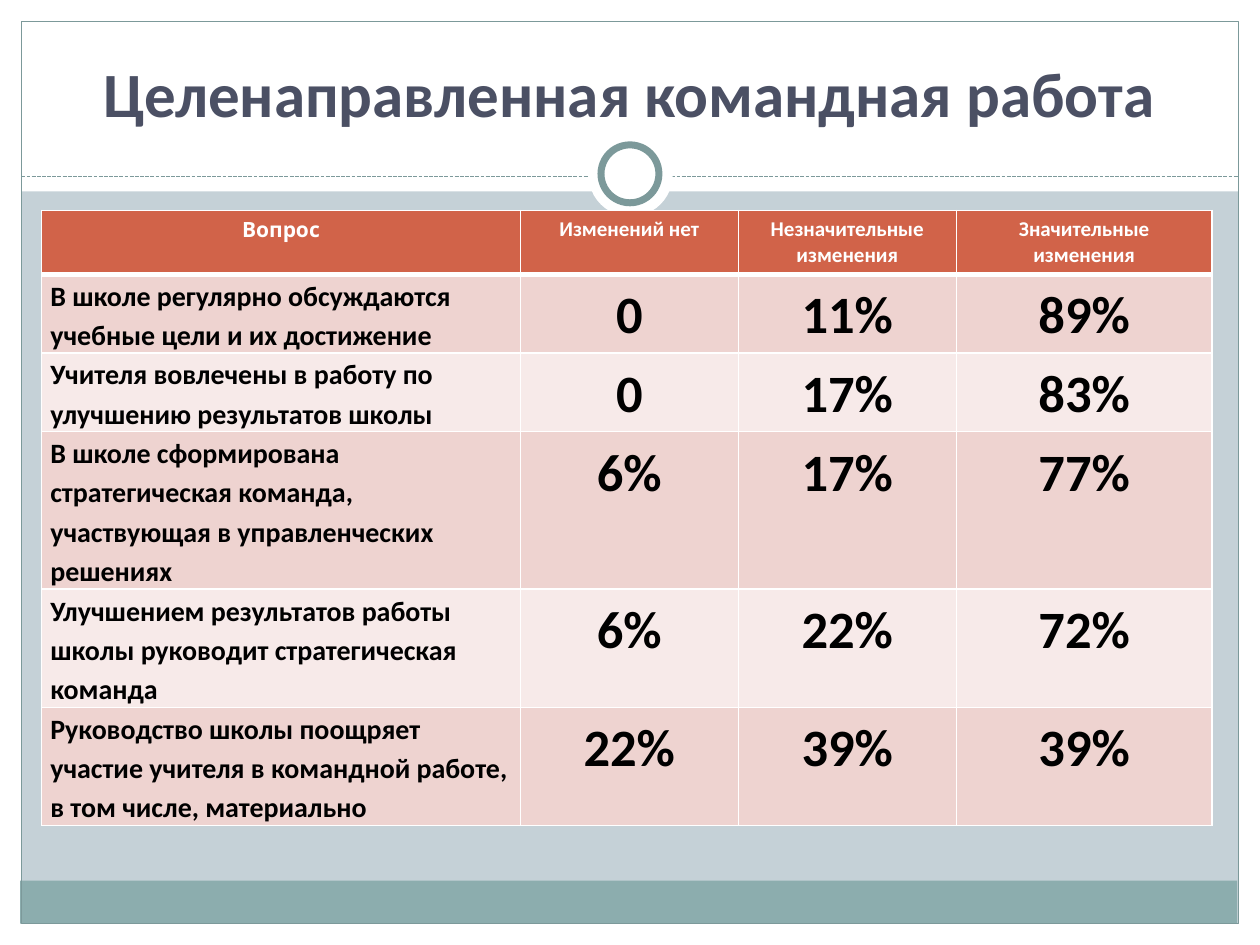
import pptx
import pptx.util
from pptx.dml.color import RGBColor
from pptx.enum.dml import MSO_LINE
from pptx.enum.shapes import MSO_CONNECTOR, MSO_SHAPE
from pptx.enum.text import MSO_ANCHOR, PP_ALIGN
from pptx.oxml.ns import qn
from lxml import etree

Inches, Pt = pptx.util.Inches, pptx.util.Pt

WHITE = RGBColor(0xFF, 0xFF, 0xFF)
BLACK = RGBColor(0, 0, 0)
BACKGROUND = RGBColor(0xC5, 0xD1, 0xD7)
BAND = RGBColor(0x8C, 0xAD, 0xAE)
FRAME = RGBColor(0x7C, 0x99, 0x9A)
TITLE_COLOR = RGBColor(0x4B, 0x50, 0x64)
HEADER_FILL = RGBColor(0xD1, 0x63, 0x49)
ROW_FILLS = (RGBColor(0xEE, 0xD3, 0xD0), RGBColor(0xF7, 0xEA, 0xE9))

TITLE = "Целенаправленная командная работа"
HEADER = ("Вопрос", "Изменений нет", "Незначительные изменения", "Значительные изменения")
ANSWERS = [
    ("В школе регулярно обсуждаются учебные цели и их достижение", "0", "11%", "89%"),
    ("Учителя вовлечены в работу по улучшению результатов школы", "0", "17%", "83%"),
    ("В школе сформирована стратегическая команда, участвующая в управленческих решениях",
     "6%", "17%", "77%"),
    ("Улучшением результатов работы школы руководит стратегическая команда",
     "6%", "22%", "72%"),
    ("Руководство школы поощряет участие учителя в командной работе, в том числе, материально",
     "22%", "39%", "39%"),
]
COLUMN_WIDTHS = (3.8, 1.73, 1.73, 2.03)
ROW_HEIGHTS = (0.5, 0.62, 0.62, 1.25, 0.93, 0.93)

# preset, (left, top, width, height), fill, line width in points
RECTANGLE, OVAL = MSO_SHAPE.RECTANGLE, MSO_SHAPE.OVAL
DECORATION = [
    (RECTANGLE, (0, 7.33, 10, 0.17), WHITE, 0),
    (RECTANGLE, (0, 0, 10, 1.52), WHITE, 0),
    (RECTANGLE, (0, 0, 0.17, 7.5), WHITE, 0),
    (RECTANGLE, (9.83, 0, 0.17, 7.5), WHITE, 0),
    (RECTANGLE, (0.16, 6.99, 9.66, 0.34), BAND, 0),
    (RECTANGLE, (0.17, 0.17, 9.66, 7.16), None, 0.75),
]
RINGS = [
    (OVAL, (4.67, 1.05, 0.67, 0.67), WHITE, 0),
    (OVAL, (4.77, 1.15, 0.46, 0.46), WHITE, 4),
]


def add_decoration(slide, preset, box, fill, line_width):
    shape = slide.shapes.add_shape(preset, *map(Inches, box))
    shape.shadow.inherit = False
    if fill is None:
        shape.fill.background()
    else:
        shape.fill.solid()
        shape.fill.fore_color.rgb = fill
    if line_width:
        shape.line.color.rgb = FRAME
        shape.line.width = Pt(line_width)
    else:
        shape.line.fill.background()


def add_divider(slide):
    divider = slide.shapes.add_connector(
        MSO_CONNECTOR.STRAIGHT, Inches(0.17), Inches(1.4), Inches(9.83), Inches(1.4))
    divider.line.color.rgb = FRAME
    divider.line.width = Pt(0.75)
    divider.line.dash_style = MSO_LINE.SQUARE_DOT
    etree.SubElement(divider.element.spPr, qn("a:effectLst"))


def format_text(paragraph, font_name, size, color):
    for run in paragraph.runs:
        run.font.name = font_name
        run.font.size = Pt(size)
        run.font.bold = True
        run.font.color.rgb = color


def add_title(slide):
    title = slide.shapes.title
    title.left, title.top, title.width, title.height = map(Inches, (0.33, 0.25, 9.33, 0.83))
    title.text_frame.text = TITLE
    title.text_frame.vertical_anchor = MSO_ANCHOR.BOTTOM
    paragraph = title.text_frame.paragraphs[0]
    paragraph.alignment = PP_ALIGN.CENTER
    format_text(paragraph, "Calibri", 36, TITLE_COLOR)
    slide.shapes.element.append(title.element)  # bring in front of the white bands


def set_borders(cell, top, bottom):
    """Draw white borders; they must precede the fill in the cell properties."""
    properties = cell._tc.get_or_add_tcPr()
    for position, (side, width) in enumerate(
            (("L", 1), ("R", 1), ("T", top), ("B", bottom))):
        border = etree.Element(qn(f"a:ln{side}"), w=str(Pt(width)))
        fill = etree.SubElement(border, qn("a:solidFill"))
        etree.SubElement(fill, qn("a:srgbClr"), val=str(WHITE))
        properties.insert(position, border)


def fill_cell(cell, text, row, column):
    is_header = row == 0
    cell.text_frame.text = text
    paragraph = cell.text_frame.paragraphs[0]
    if is_header or column:
        paragraph.alignment = PP_ALIGN.CENTER
    if is_header:
        format_text(paragraph, "Calibri" if column else "Cabin", 12, WHITE)
    else:
        cell.margin_left = cell.margin_right = Inches(0.07)
        cell.margin_top = cell.margin_bottom = 0
        paragraph.line_spacing = 1.15
        paragraph.space_after = Pt(10)
        format_text(paragraph, "Calibri", 30 if column else 16, BLACK)
    cell.fill.solid()
    cell.fill.fore_color.rgb = HEADER_FILL if is_header else ROW_FILLS[(row - 1) % 2]
    set_borders(cell, top=3 if row == 1 else 1, bottom=3 if is_header else 1)


def add_answers_table(slide):
    rows = [HEADER, *ANSWERS]
    table = slide.shapes.add_table(
        len(rows), len(HEADER), Inches(0.33), Inches(1.67),
        Inches(sum(COLUMN_WIDTHS)), Inches(sum(ROW_HEIGHTS))).table
    for column, width in zip(table.columns, COLUMN_WIDTHS):
        column.width = Inches(width)
    for row, height in zip(table.rows, ROW_HEIGHTS):
        row.height = Inches(height)
    for row, texts in enumerate(rows):
        for column, text in enumerate(texts):
            fill_cell(table.cell(row, column), text, row, column)


def main():
    presentation = pptx.Presentation()
    presentation.slide_width, presentation.slide_height = Inches(10), Inches(7.5)
    slide = presentation.slides.add_slide(presentation.slide_layouts[5])
    slide.background.fill.solid()
    slide.background.fill.fore_color.rgb = BACKGROUND
    for item in DECORATION:
        add_decoration(slide, *item)
    add_divider(slide)
    for ring in RINGS:
        add_decoration(slide, *ring)
    add_title(slide)
    add_answers_table(slide)
    presentation.save("out.pptx")


if __name__ == "__main__":
    main()
